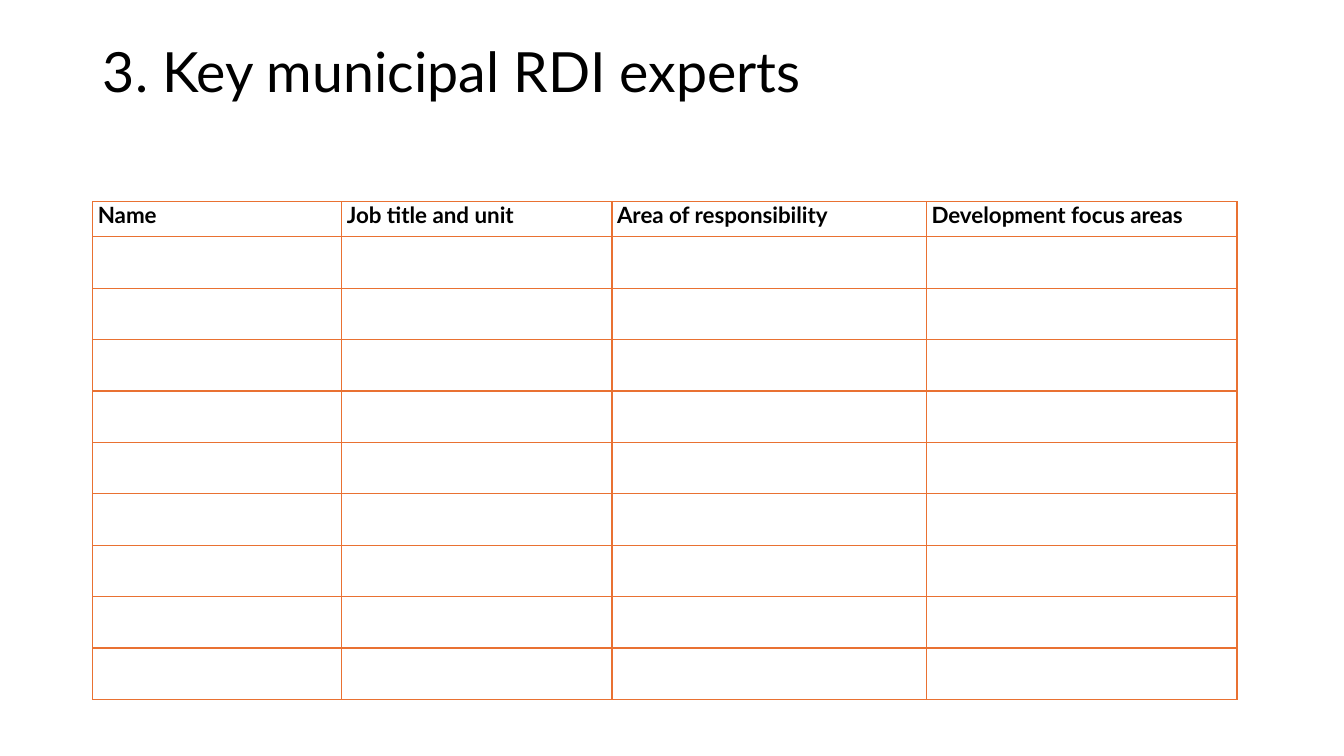
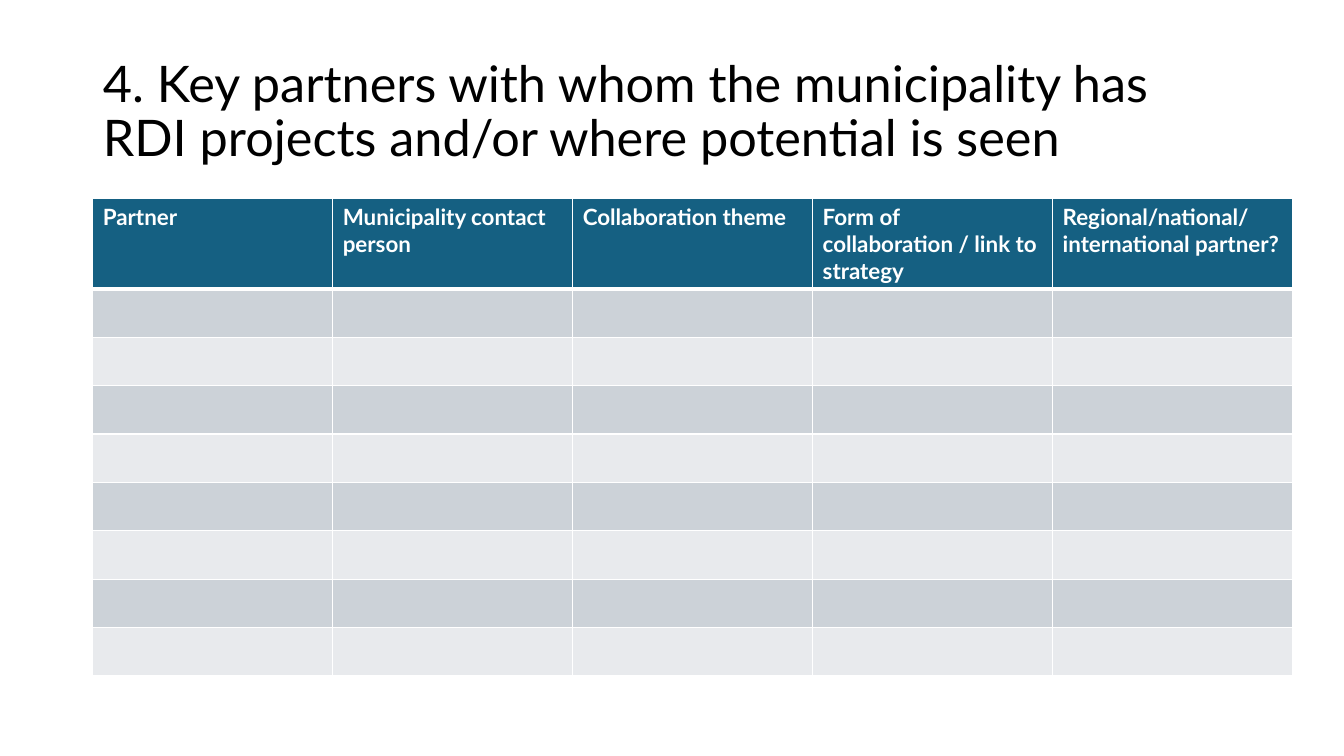
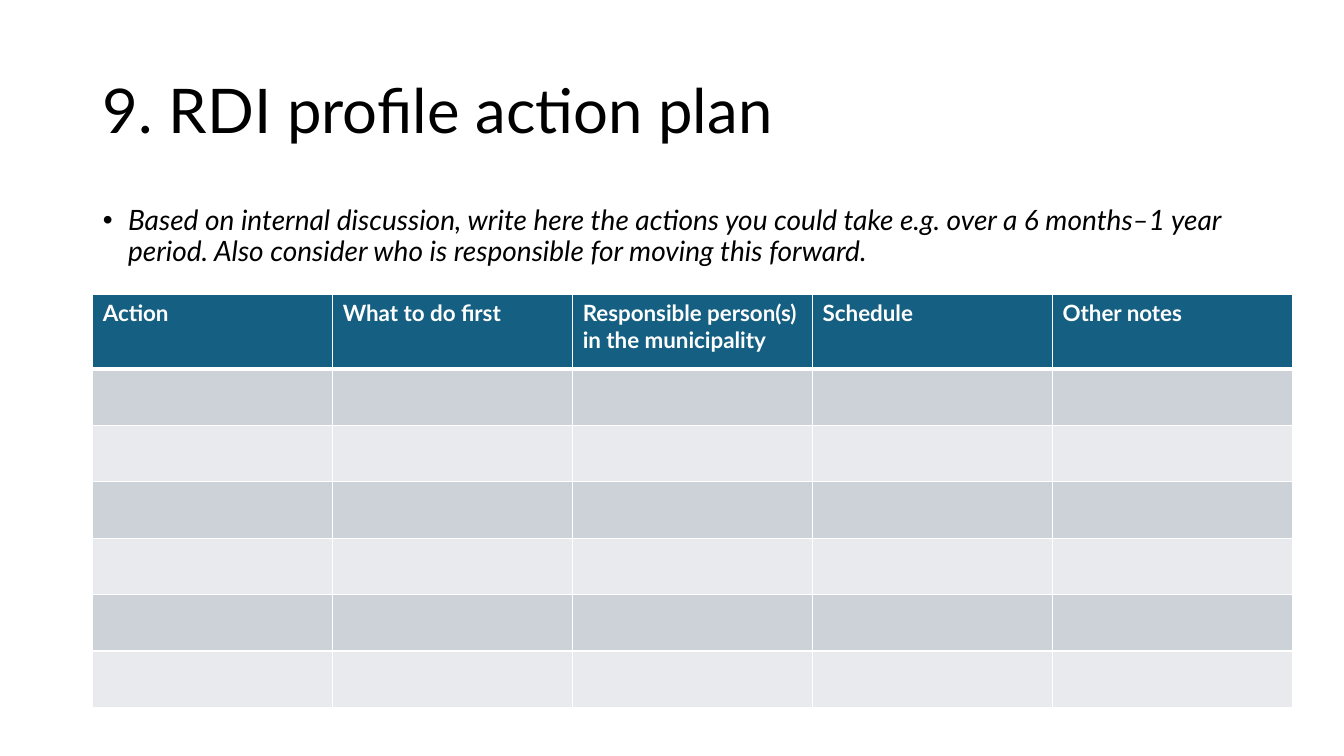
from pptx import Presentation
from pptx.dml.color import RGBColor
from pptx.enum import text as t
from pptx.oxml import parse_xml
from pptx.oxml.ns import nsdecls
from pptx.util import Inches, Pt

# Shared style
FONT = "Lato"
BLACK, WHITE, ORANGE, TEAL = "000000", "FFFFFF", "E97132", "156082"
BANDS = ("CCD2D8", "E8EAED")
LEFT, TOP, WIDTH = 0.92, 0.4, 11.5
TITLE_ONLY, TITLE_AND_BODY = 5, 1

GRID = dict(line=ORANGE, rule=1, ink=BLACK, head_fill=None, bands=(None,),
            spacing=Pt(12.8), anchor=t.MSO_ANCHOR.MIDDLE, inset=(0.05, 0.02))
BANDED = dict(line=WHITE, rule=3, ink=WHITE, head_fill=TEAL, bands=BANDS,
              spacing=None, anchor=t.MSO_ANCHOR.TOP, inset=(0.1, 0.05))
EQUAL = [2.38] * 5

# Content
SLIDES = [
    dict(title="3. Key municipal RDI experts", size=39.6, box=(11.91, 0.68),
         heads=["Name", "Job title and unit", "Area of responsibility",
                "Development focus areas"],
         top=2, cols=[2.47, 2.68, 3.12, 3.08], rows=[0.35] + [0.51] * 9, style=GRID),
    dict(title="4. Key partners with whom the municipality has RDI projects "
               "and/or where potential is seen", size=36, box=(WIDTH, 1.45),
         heads=["Partner", "Municipality contact person", "Collaboration theme",
                "Form of collaboration / link to strategy",
                "Regional/national/international partner?"],
         top=1.97, cols=EQUAL, rows=[0.48] * 9, style=BANDED),
    dict(title="9. RDI profile action plan", size=44, box=(WIDTH, 1.45),
         body="Based on internal discussion, write here the actions you could take "
              "e.g. over a 6 months–1 year period. Also consider who is responsible "
              "for moving this forward.",
         heads=["Action", "What to do first", "Responsible person(s) in the municipality",
                "Schedule", "Other notes"],
         top=2.92, cols=EQUAL, rows=[0.74] + [0.56] * 6, style=BANDED),
]


def write(tf, text, size, color=BLACK, bold=False, italic=False, spacing=0.9):
    p = tf.paragraphs[0]
    p.alignment = t.PP_ALIGN.LEFT
    p.space_before = Pt(0)
    if spacing:
        p.line_spacing = spacing
    r = p.add_run()
    r.text = text
    f = r.font
    f.name, f.size, f.bold, f.italic = FONT, Pt(size), bold, italic
    f.color.rgb = RGBColor.from_string(color)
    return p


def place(sp, left, top, width, height, anchor):
    sp.left, sp.top, sp.width, sp.height = map(Inches, (left, top, width, height))
    tf = sp.text_frame
    tf.word_wrap, tf.auto_size, tf.vertical_anchor = True, t.MSO_AUTO_SIZE.NONE, anchor
    return tf


def set_borders(cell, color, **widths):
    tcPr = cell._tc.get_or_add_tcPr()
    for side in "LRTB":
        tcPr.append(parse_xml(
            f'<a:ln{side} {nsdecls("a")} w="{Pt(widths.get(side, 1))}"><a:solidFill>'
            f'<a:srgbClr val="{color}"/></a:solidFill></a:ln{side}>'))


def add_table(s, top, cols, rows, heads, style):
    size = map(Inches, (LEFT, top, sum(cols), sum(rows)))
    table = s.shapes.add_table(len(rows), len(cols), *size).table
    table.horz_banding = False
    for col, width in zip(table.columns, cols):
        col.width = Inches(width)
    for i, (row, height) in enumerate(zip(table.rows, rows)):
        row.height = Inches(height)
        fill = style["bands"][(i - 1) % len(style["bands"])] if i else style["head_fill"]
        # The rule under the header is shared by the first two rows
        edge = {0: {"B": style["rule"]}, 1: {"T": style["rule"]}}.get(i, {})
        for j, cell in enumerate(row.cells):
            set_borders(cell, style["line"], **edge)
            if fill:
                cell.fill.solid()
                cell.fill.fore_color.rgb = RGBColor.from_string(fill)
            else:
                cell.fill.background()
            if i == 0:
                x, y = map(Inches, style["inset"])
                cell.margin_left = cell.margin_right = x
                cell.margin_top = cell.margin_bottom = y
                cell.vertical_anchor = style["anchor"]
                write(cell.text_frame, heads[j], 16, style["ink"], bold=True,
                      spacing=style["spacing"])


def add_slide(prs, title, size, box, body=None, **table):
    s = prs.slides.add_slide(prs.slide_layouts[TITLE_AND_BODY if body else TITLE_ONLY])
    write(place(s.shapes.title, LEFT, TOP, *box, t.MSO_ANCHOR.MIDDLE), title, size)
    if body:
        tf = place(s.placeholders[1], LEFT, 2, WIDTH, 4.76, t.MSO_ANCHOR.TOP)
        pPr = write(tf, body, 20, italic=True)._p.get_or_add_pPr()
        pPr.set("marL", str(Inches(0.25)))
        pPr.set("indent", str(Inches(-0.25)))
        pPr.append(parse_xml(f'<a:buFont {nsdecls("a")} typeface="Arial"/>'))
        pPr.append(parse_xml(f'<a:buChar {nsdecls("a")} char="•"/>'))
    add_table(s, **table)


def main():
    prs = Presentation()
    prs.slide_width, prs.slide_height = Inches(13.33), Inches(7.5)
    for slide in SLIDES:
        add_slide(prs, **slide)
    prs.save("out.pptx")


if __name__ == "__main__":
    main()
